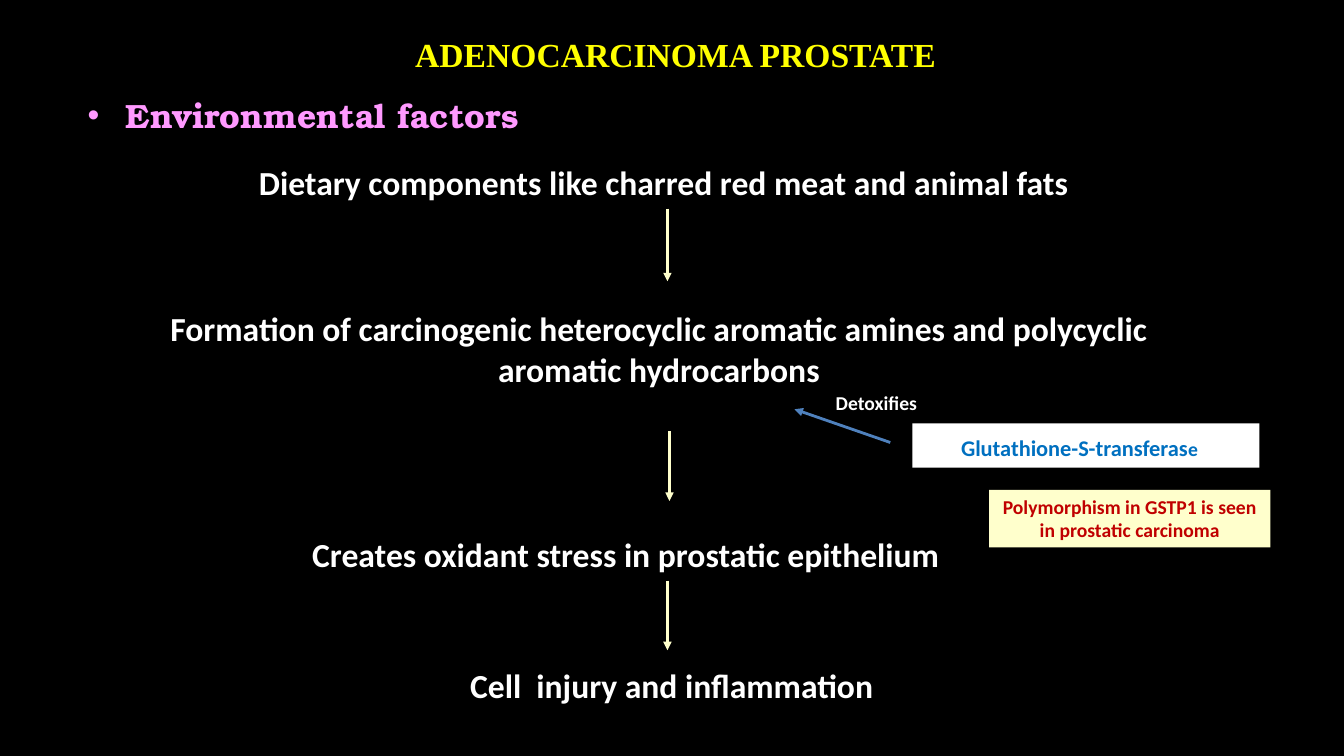
from lxml import etree
from pptx import Presentation
from pptx.dml.color import RGBColor
from pptx.enum.shapes import MSO_CONNECTOR, MSO_SHAPE
from pptx.enum.text import MSO_ANCHOR, PP_ALIGN
from pptx.oxml.ns import qn
from pptx.util import Inches, Pt

COLORS = {
    "background": "000000",
    "title": "FFFF00",
    "heading": "FF99FF",
    "step": "FFFFFF",
    "enzyme": "0070C0",
    "enzyme_box": "FFFFFF",
    "detox_arrow": "4F81BD",
    "polymorphism": "C00000",
    "cream": "FFFFCC",
}


def color(name):
    return RGBColor.from_string(COLORS[name])


def write_text(shape, text, text_color, size=24, font="Calibri", align=PP_ALIGN.CENTER):
    """Fill the shape with one bold paragraph and return that paragraph."""
    frame = shape.text_frame
    frame.word_wrap = True
    frame.vertical_anchor = MSO_ANCHOR.TOP
    paragraph = frame.paragraphs[0]
    paragraph.alignment = align
    paragraph.add_run().text = text
    paragraph.font.name = font
    paragraph.font.size = Pt(size)
    paragraph.font.bold = True
    paragraph.font.color.rgb = color(text_color)
    return paragraph


presentation = Presentation()
presentation.slide_width = Inches(13.33)
presentation.slide_height = Inches(7.5)
slide = presentation.slides.add_slide(presentation.slide_layouts[6])
slide.background.fill.solid()
slide.background.fill.fore_color.rgb = color("background")
shapes = slide.shapes

# Title and bulleted heading
title = shapes.add_textbox(Inches(2.2), Inches(0.1), Inches(9), Inches(0.92))
paragraph = write_text(title, "ADENOCARCINOMA PROSTATE", "title", font="Times New Roman")
paragraph.line_spacing = 0.9
title.text_frame.vertical_anchor = MSO_ANCHOR.MIDDLE

heading = shapes.add_textbox(Inches(0.77), Inches(0.89), Inches(4.83), Inches(0.67))
paragraph = write_text(heading, "Environmental factors", "heading",
                       font="TeX Gyre Bonum", align=PP_ALIGN.LEFT)
paragraph.space_before = Pt(5)
properties = paragraph._p.get_or_add_pPr()
properties.set("marL", str(Inches(0.38)))
properties.set("indent", str(-Inches(0.38)))
bullet_font = etree.Element(qn("a:buFont"), typeface="Arial")
bullet = etree.Element(qn("a:buChar"), char="•")
default_font = properties.find(qn("a:defRPr"))
default_font.addprevious(bullet_font)
default_font.addprevious(bullet)

# Steps of the pathway
steps = [
    ("Dietary components like charred red meat and animal fats ", 2.33, 1.56, 8.58, 0.5),
    ("Formation of carcinogenic heterocyclic aromatic amines and polycyclic "
     "aromatic hydrocarbons", 1.18, 3.01, 10.71, 0.91),
    ("Creates oxidant stress in prostatic epithelium ", 2.91, 5.25, 6.67, 0.51),
    ("Cell  injury and inflammation ", 4.2, 6.55, 5, 0.51),
]
for text, *box in steps:
    step = shapes.add_textbox(*map(Inches, box))
    write_text(step, text, "step")

# Enzyme and polymorphism boxes
boxes = [
    ("Glutathione-S-transferas", "enzyme", 16, "enzyme_box", 9.05, 4.2, 3.44, 0.44),
    ("Polymorphism in GSTP1 is seen in prostatic carcinoma", "polymorphism", 14, "cream",
     9.81, 4.86, 2.79, 0.57),
]
paragraphs = {}
for text, text_color, size, fill, *box in boxes:
    rectangle = shapes.add_shape(MSO_SHAPE.RECTANGLE, *map(Inches, box))
    rectangle.shadow.inherit = False
    rectangle.fill.solid()
    rectangle.fill.fore_color.rgb = color(fill)
    rectangle.line.fill.background()
    paragraphs[text_color] = write_text(rectangle, text, text_color, size)

for ending, size in [("e", 14), ("  ", 20)]:
    run = paragraphs["enzyme"].add_run()
    run.text = ending
    run.font.size = Pt(size)
# Shape styles colour runs directly, so each run repeats its paragraph colour
for text_color, paragraph in paragraphs.items():
    for run in paragraph.runs:
        run.font.color.rgb = color(text_color)

detoxifies = shapes.add_textbox(Inches(8.19), Inches(3.83), Inches(1.5), Inches(0.34))
write_text(detoxifies, "Detoxifies", "step", 14, align=PP_ALIGN.LEFT)

# Arrows
arrows = [
    ("detox_arrow", 8.83, 4.39, 7.88, 4.06),
    ("cream", 6.62, 2.07, 6.62, 2.79),
    ("cream", 6.64, 4.28, 6.64, 4.97),
    ("cream", 6.62, 5.76, 6.62, 6.45),
]
for line_color, *ends in arrows:
    arrow = shapes.add_connector(MSO_CONNECTOR.STRAIGHT, *map(Inches, ends))
    arrow.line.color.rgb = color(line_color)
    arrow.line.width = Pt(2)
    etree.SubElement(arrow.line._get_or_add_ln(), qn("a:tailEnd"), type="triangle")
    etree.SubElement(arrow._element.spPr, qn("a:effectLst"))

presentation.save("out.pptx")
